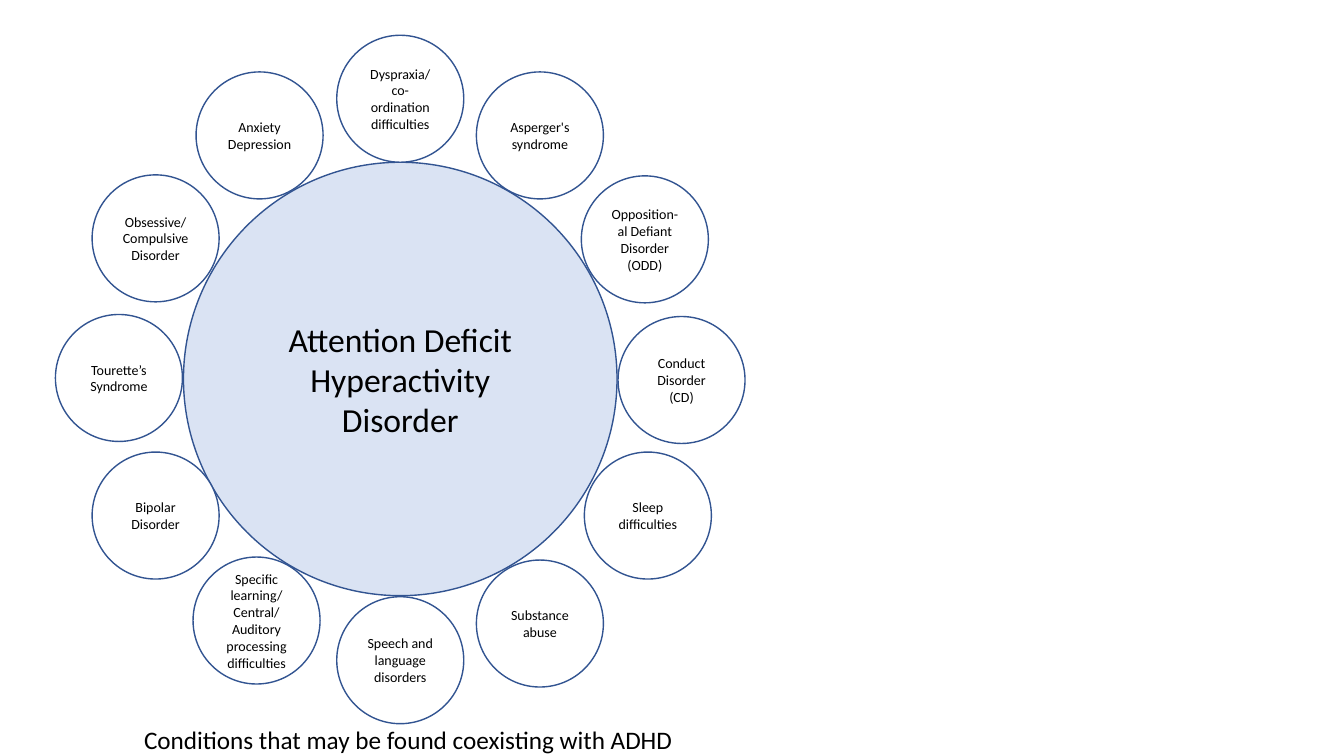
from math import cos, radians, sin
from pptx import Presentation
from pptx.dml.color import RGBColor
from pptx.enum.shapes import MSO_SHAPE
from pptx.enum.text import MSO_ANCHOR, PP_ALIGN
from pptx.util import Emu, Pt

TOPIC = "Attention Deficit Hyperactivity Disorder"
CAPTION = "Conditions that may be found coexisting with ADHD"
CONDITIONS = [
    (["Dyspraxia/", "co-ordination difficulties"], (0, 1)),
    (["Asperger's syndrome"], (-1, 0)),
    (["Opposition-al Defiant Disorder (ODD)"], (1, 1)),
    (["Conduct Disorder (CD)"], (0, 1)),
    (["Sleep difficulties"], (4, -4)),
    (["Substance abuse"], (-1, 1)),
    (["Speech and language disorders"], (0, 0)),
    (["Specific learning/", "Central/", "Auditory processing difficulties"], (-3, -2)),
    (["Bipolar Disorder"], (-1, -4)),
    (["Tourette’s Syndrome"], (0, -1)),
    (["Obsessive/Compulsive Disorder"], (-1, 0)),
    (["Anxiety Depression"], (0, 0)),
]

BLACK = RGBColor(0x00, 0x00, 0x00)
WHITE = RGBColor(0xFF, 0xFF, 0xFF)
PALE_BLUE = RGBColor(0xDA, 0xE3, 0xF3)
OUTLINE = RGBColor(0x32, 0x54, 0x91)

PX = 9144
CENTRE_X, CENTRE_Y = 397, 376
HUB_SIZE, CONDITION_SIZE, RING_RADIUS = 430, 126, 279


def px(n):
    return Emu(round(n * PX))


def write(tf, lines, size, align):
    tf.word_wrap = True
    for i, line in enumerate(lines):
        p = tf.paragraphs[0] if i == 0 else tf.add_paragraph()
        p.alignment = align
        r = p.add_run()
        r.text = line
        for name, value in {"name": "Calibri", "size": Pt(size)}.items():
            setattr(r.font, name, value)
        r.font.color.rgb = BLACK


def add_circle(s, x, y, size, fill, lines, font_size):
    sp = s.shapes.add_shape(MSO_SHAPE.FLOWCHART_CONNECTOR,
                            px(x - size / 2), px(y - size / 2), px(size), px(size))
    sp.shadow.inherit = False
    sp.fill.solid()
    sp.fill.fore_color.rgb = fill
    sp.line.color.rgb = OUTLINE
    sp.line.width = Pt(1)
    sp.text_frame.vertical_anchor = MSO_ANCHOR.MIDDLE
    write(sp.text_frame, lines, font_size, PP_ALIGN.CENTER)


def main():
    prs = Presentation()
    prs.slide_width, prs.slide_height = px(1333), px(750)
    s = prs.slides.add_slide(prs.slide_layouts[6])

    add_circle(s, CENTRE_X, CENTRE_Y, HUB_SIZE, PALE_BLUE, [TOPIC], 24)
    for i, (lines, (dx, dy)) in enumerate(CONDITIONS):
        angle = radians(i * 360 / len(CONDITIONS))
        x = CENTRE_X + RING_RADIUS * sin(angle) + dx
        y = CENTRE_Y - RING_RADIUS * cos(angle) + dy
        add_circle(s, x, y, CONDITION_SIZE, WHITE, lines, 10)

    caption = s.shapes.add_textbox(px(133), px(714), px(605), px(42))
    write(caption.text_frame, [CAPTION], 18, PP_ALIGN.LEFT)
    prs.save("out.pptx")


if __name__ == "__main__":
    main()
